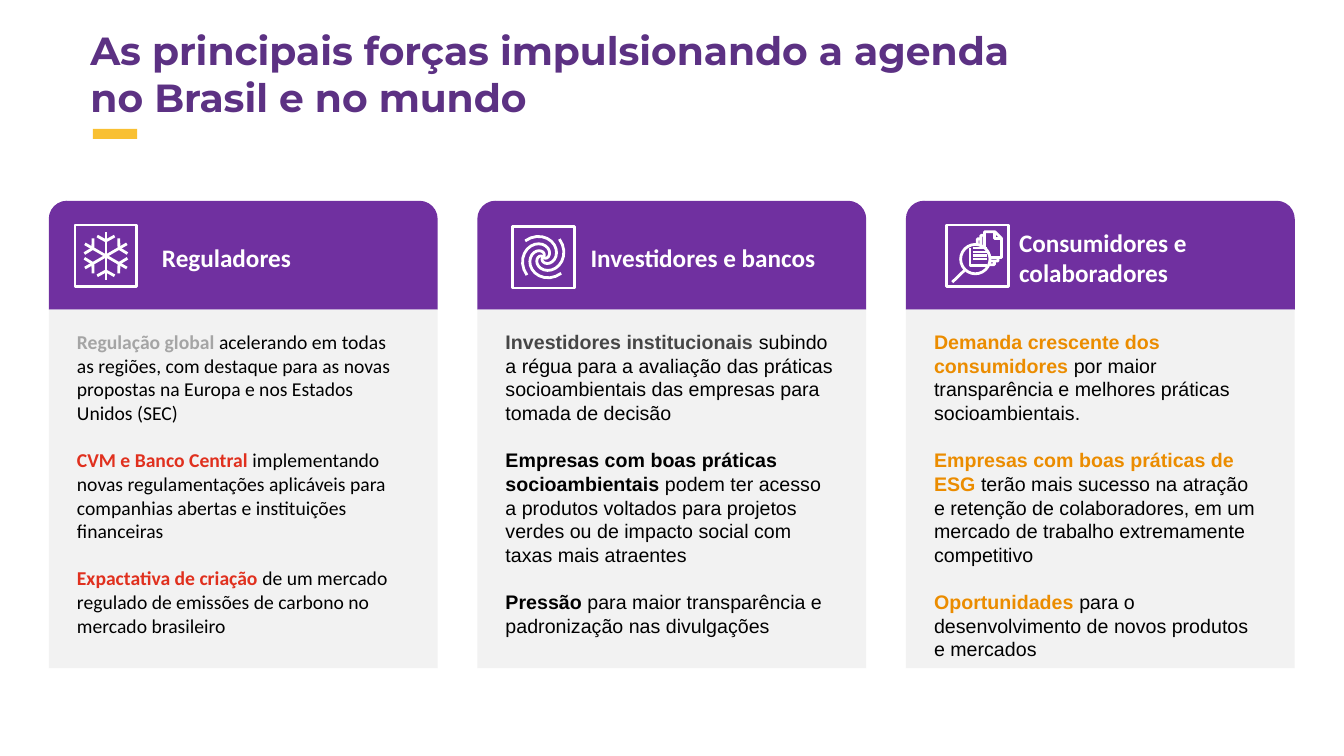
from math import cos, radians, sin

from pptx import Presentation
from pptx.dml.color import RGBColor
from pptx.enum.shapes import MSO_SHAPE as Shape
from pptx.enum.text import MSO_ANCHOR as Anchor, PP_ALIGN as Align
from pptx.util import Cm, Pt

WHITE = RGBColor(0xFF, 0xFF, 0xFF)
BLACK = RGBColor(0x00, 0x00, 0x00)
TITLE_PURPLE = RGBColor(0x5C, 0x31, 0x83)
CARD_PURPLE = RGBColor(0x70, 0x30, 0xA0)
YELLOW = RGBColor(0xF9, 0xC0, 0x32)
PALE_GRAY = RGBColor(0xF2, 0xF2, 0xF2)
MID_GRAY = RGBColor(0xA5, 0xA5, 0xA5)
DARK_GRAY = RGBColor(0x46, 0x46, 0x46)
RED = RGBColor(0xE0, 0x30, 0x1E)
ORANGE = RGBColor(0xEB, 0x8C, 0x00)

CARD_WIDTH, CARD_PITCH = 9.8, 10.8
HEADER_TOP, HEADER_HEIGHT = 5.06, 2.74
BODY_HEIGHT = 9.04
LINE_HEIGHT = Pt(16.9)

CARDS = [
    ("Reguladores", "Calibri", [
        ("Regulação global ", MID_GRAY,
         "acelerando em todas as regiões, com destaque para as novas "
         "propostas na Europa e nos Estados Unidos (SEC)"),
        ("CVM e Banco Central ", RED,
         "implementando novas regulamentações aplicáveis para "
         "companhias abertas e instituições financeiras"),
        ("Expactativa de criação ", RED,
         "de um mercado regulado de emissões de carbono no mercado brasileiro"),
    ]),
    ("Investidores e bancos", "Arial", [
        ("Investidores institucionais ", DARK_GRAY,
         "subindo a régua para a avaliação das práticas socioambientais "
         "das empresas para tomada de decisão"),
        ("Empresas com boas práticas socioambientais ", BLACK,
         "podem ter acesso a produtos voltados para projetos verdes ou "
         "de impacto social com taxas mais atraentes"),
        ("Pressão ", BLACK,
         "para maior transparência e padronização nas divulgações"),
    ]),
    ("Consumidores e colaboradores", "Arial", [
        ("Demanda crescente dos consumidores ", ORANGE,
         "por maior transparência e melhores práticas socioambientais."),
        ("Empresas com boas práticas de ESG ", ORANGE,
         "terão mais sucesso na atração e retenção de colaboradores, em "
         "um mercado de trabalho extremamente competitivo"),
        ("Oportunidades ", ORANGE,
         "para o desenvolvimento de novos produtos e mercados"),
    ]),
]

deck = Presentation()
deck.slide_width, deck.slide_height = Cm(33.87), Cm(19.05)
page = deck.slides.add_slide(deck.slide_layouts[6])


def add_block(kind, left, top, width, height, fill=None):
    """Add a preset shape: filled without outline, or white outline only."""
    block = page.shapes.add_shape(kind, Cm(left), Cm(top), Cm(width), Cm(height))
    block.shadow.inherit = False
    if fill is None:
        block.fill.background()
        block.line.color.rgb = WHITE
        block.line.width = Pt(2)
    else:
        block.fill.solid()
        block.fill.fore_color.rgb = fill
        block.line.fill.background()
    return block


def draw_strokes(center, strokes, width=2, fill=None):
    """Draw white polylines, given in cm from the centre, as one freeform."""
    points = [[(Cm(center[0] + x), Cm(center[1] + y)) for x, y in stroke]
              for stroke in strokes]
    builder = page.shapes.build_freeform(*points[0][0])
    for number, stroke in enumerate(points):
        if number:
            builder.move_to(*stroke[0])
        builder.add_line_segments(stroke[1:], close=False)
    outline = builder.convert_to_shape()
    outline.shadow.inherit = False
    outline.line.color.rgb = WHITE
    outline.line.width = Pt(width)
    if fill is None:
        outline.fill.background()
    else:
        outline.fill.solid()
        outline.fill.fore_color.rgb = fill


# Title
title = page.shapes.add_textbox(Cm(2.03), Cm(0.53), Cm(24.16), Cm(2.49))
title.text_frame.word_wrap = True
span = title.text_frame.paragraphs[0].add_run()
span.text = "As principais forças impulsionando a agenda no Brasil e no mundo"
span.font.name, span.font.size, span.font.bold = "Montserrat", Pt(28), True
span.font.color.rgb = TITLE_PURPLE
add_block(Shape.RECTANGLE, 2.34, 3.25, 1.12, 0.25, YELLOW)

# Cards
for column, (heading, body_font, points) in enumerate(CARDS):
    left = 1.23 + column * CARD_PITCH
    header = add_block(Shape.ROUND_2_SAME_RECTANGLE, left, HEADER_TOP,
                       CARD_WIDTH, HEADER_HEIGHT, CARD_PURPLE)
    frame = header.text_frame
    frame.word_wrap = True
    frame.vertical_anchor = Anchor.MIDDLE
    frame.margin_left = Cm(2.72)
    para = frame.paragraphs[0]
    para.alignment = Align.LEFT
    span = para.add_run()
    span.text = heading
    span.font.name, span.font.size, span.font.bold = "Calibri", Pt(18), True
    span.font.color.rgb = WHITE

    body = add_block(Shape.RECTANGLE, left, HEADER_TOP + HEADER_HEIGHT,
                     CARD_WIDTH, BODY_HEIGHT, PALE_GRAY)
    frame = body.text_frame
    frame.word_wrap = True
    frame.vertical_anchor = Anchor.TOP
    frame.margin_left, frame.margin_right = Cm(0.71), Cm(0.79)
    frame.margin_top, frame.margin_bottom = Cm(0.51), Cm(0.13)
    for number, (lead, color, rest) in enumerate(points):
        para = frame.add_paragraph() if number else frame.paragraphs[0]
        para.alignment = Align.LEFT
        para.line_spacing = LINE_HEIGHT
        if number:
            para.space_before = LINE_HEIGHT
        for text, bold, shade in ((lead, True, color), (rest, False, BLACK)):
            span = para.add_run()
            span.text = text
            span.font.name, span.font.size = body_font, Pt(14)
            span.font.bold = bold
            span.font.color.rgb = shade

# Icon frames
snowflake, spiral, magnifier = (2.67, 6.45), (13.69, 6.48), (24.64, 6.45)
for x, y in (snowflake, spiral, magnifier):
    add_block(Shape.RECTANGLE, x - 0.78, y - 0.78, 1.56, 1.56)

# Snowflake: six turned arms, each with a forked tip
arm = [[(0, 0), (0, -0.61)], [(-0.22, -0.5), (0, -0.38), (0.22, -0.5)]]
flake = []
for step in range(6):
    c, s = cos(radians(60 * step)), sin(radians(60 * step))
    flake += [[(x * c - y * s, x * s + y * c) for x, y in stroke] for stroke in arm]
draw_strokes(snowflake, flake)

# Spiral: four turned arms that wind inwards
arms = []
for start in range(222, 582, 90):
    arms.append([(0.61 * (1 - turn / 285) * cos(radians(start + turn)),
                  0.61 * (1 - turn / 285) * sin(radians(start + turn)))
                 for turn in range(0, 286, 15)])
draw_strokes(spiral, arms)

# Magnifier over three stacked sheets
for step in (2, 1, 0):
    x, y = 0.17 - 0.09 * step, -0.61 + 0.09 * step
    sheet = [(x, y), (x + 0.26, y), (x + 0.43, y + 0.17),
             (x + 0.43, y + 0.65), (x, y + 0.65), (x, y)]
    fold = [(x + 0.26, y), (x + 0.26, y + 0.17), (x + 0.43, y + 0.17)]
    draw_strokes(magnifier, [sheet, fold], fill=CARD_PURPLE)
lens = add_block(Shape.OVAL, magnifier[0] - 0.43, magnifier[1] - 0.29, 0.74, 0.74)
lens.fill.solid()
lens.fill.fore_color.rgb = CARD_PURPLE
text_lines = [[(-0.13, -0.19 + 0.09 * row), (0.23, -0.19 + 0.09 * row)]
              for row in range(4)]
page_edge = [(-0.19, -0.2), (-0.19, 0.24), (0.23, 0.24)]
draw_strokes(magnifier, text_lines + [page_edge], width=1.5)
draw_strokes(magnifier, [[(-0.33, 0.36), (-0.64, 0.66)]])

deck.save("out.pptx")
